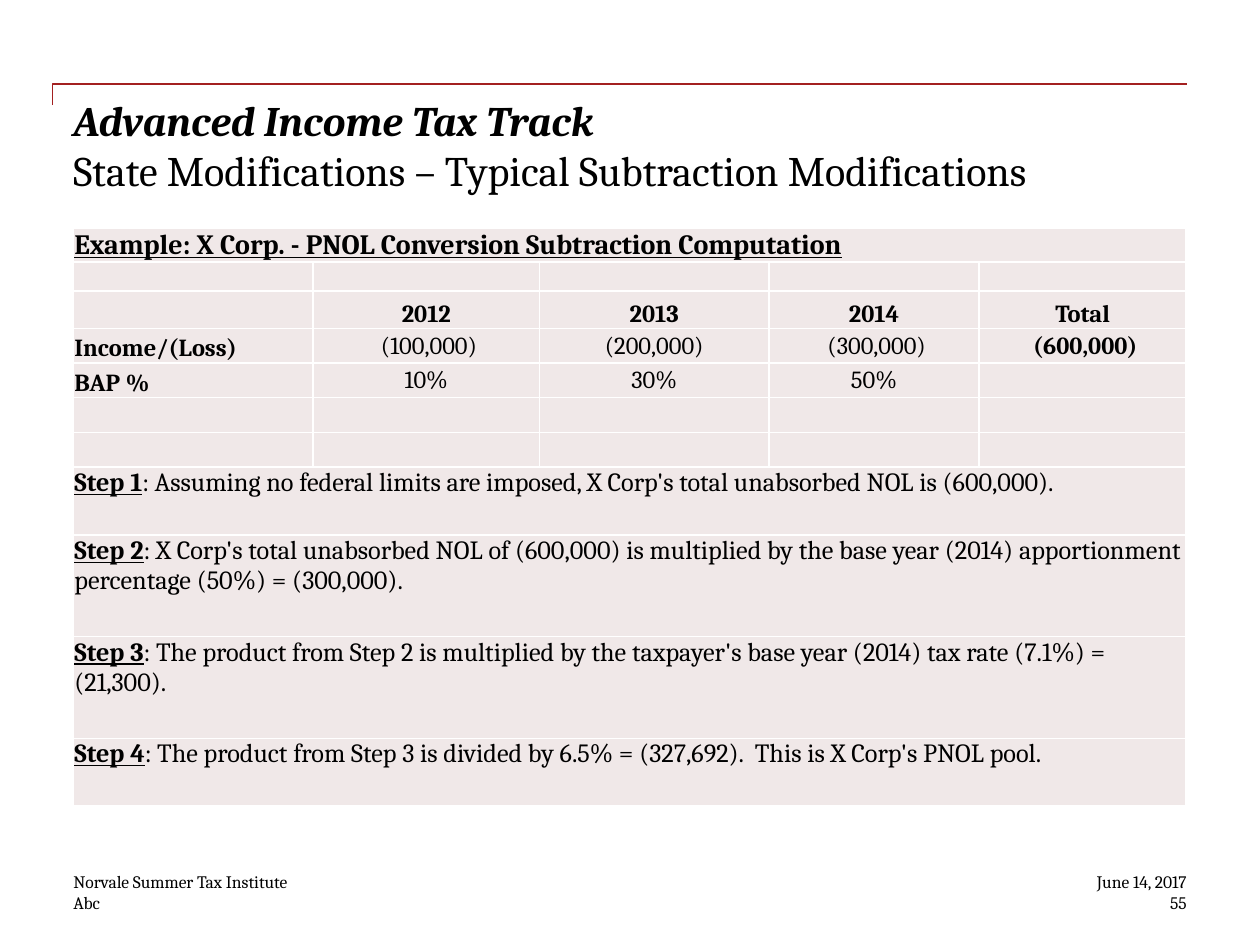
from dataclasses import dataclass

from pptx import Presentation
from pptx.dml.color import RGBColor
from pptx.enum.text import MSO_ANCHOR, PP_ALIGN
from pptx.util import Cm, Pt

LEFT, CENTER, RIGHT = PP_ALIGN.LEFT, PP_ALIGN.CENTER, PP_ALIGN.RIGHT
TOP, MIDDLE, BOTTOM = MSO_ANCHOR.TOP, MSO_ANCHOR.MIDDLE, MSO_ANCHOR.BOTTOM


@dataclass(frozen=True)
class Theme:
    font: str = "Cambria"
    text: RGBColor = RGBColor(0, 0, 0)
    rule: RGBColor = RGBColor(0xA3, 0x20, 0x20)
    cell: RGBColor = RGBColor(0xF0, 0xE8, 0xE8)
    title: Pt = Pt(24)
    heading: Pt = Pt(16)
    step: Pt = Pt(15)
    figure: Pt = Pt(14)
    small: Pt = Pt(10)


T = Theme()


def style(p, size, align=LEFT, bold=None):
    p.alignment = align
    p.font.name, p.font.size, p.font.bold = T.font, size, bold
    p.font.color.rgb = T.text


def clear_margins(tf):
    tf.margin_left = tf.margin_right = tf.margin_top = tf.margin_bottom = 0
    tf.word_wrap = True


prs = Presentation()
prs.slide_width, prs.slide_height = Cm(25.4), Cm(19.05)
s = prs.slides.add_slide(prs.slide_layouts[5])

# Red corner rule
fb = s.shapes.build_freeform(Cm(1.06), Cm(2.12))
fb.add_line_segments([(Cm(1.06), Cm(1.7)), (Cm(23.92), Cm(1.7))], close=False)
rule = fb.convert_to_shape()
rule.shadow.inherit = False
rule.fill.background()
rule.line.color.rgb = T.rule
rule.line.width = Pt(1)

# Title
title = s.shapes.title
title.left, title.top, title.width, title.height = Cm(1.48), Cm(1.9), Cm(22.43), Cm(2.54)
tf = title.text_frame
clear_margins(tf)
tf.vertical_anchor = TOP
p = tf.paragraphs[0]
style(p, T.title)
r = p.add_run()
r.text = "Advanced Income Tax Track"
r.font.bold = r.font.italic = True
p.add_line_break()
p.add_run().text = "State Modifications – Typical Subtraction Modifications"

# Table
COLS = [4.83, 4.57, 4.62, 4.24, 4.17]
ROWS = [0.66, 0.59, 0.75, 0.7, 0.7, 0.7, 0.7, 1.37, 2.05, 2.05, 1.36]
FIGURES = {
    2: ["", "2012", "2013", "2014", "Total"],
    3: ["Income/(Loss)", " (100,000)", "(200,000)", " (300,000)", " (600,000)"],
    4: ["BAP %", "10%", "30%", "50%", ""],
}
STEPS = [
    "Assuming no federal limits are imposed, X Corp's total unabsorbed NOL is (600,000).",
    "X Corp's total unabsorbed NOL of (600,000) is multiplied by the base year (2014) "
    "apportionment percentage (50%) = (300,000).",
    "The product from Step 2 is multiplied by the taxpayer's base year (2014) tax rate "
    "(7.1%) = (21,300).",
    "The product from Step 3 is divided by 6.5% = (327,692).  This is X Corp's PNOL pool.",
]
FIRST_STEP = 7

table = s.shapes.add_table(len(ROWS), len(COLS), Cm(1.48), Cm(4.61),
                           Cm(sum(COLS)), Cm(sum(ROWS))).table
table.first_row = table.horz_banding = False
for col, width in zip(table.columns, COLS):
    col.width = Cm(width)
for row, height in zip(table.rows, ROWS):
    row.height = Cm(height)
    for cell in row.cells:
        cell.fill.solid()
        cell.fill.fore_color.rgb = T.cell
        cell.margin_left = cell.margin_right = cell.margin_top = Cm(0.02)
        cell.margin_bottom = 0
        style(cell.text_frame.paragraphs[0], T.small)

for i in (0, *range(FIRST_STEP, len(ROWS))):
    table.cell(i, 0).merge(table.cell(i, len(COLS) - 1))

p = table.cell(0, 0).text_frame.paragraphs[0]
p.add_run().text = "Example: X Corp. - PNOL Conversion Subtraction Computation"
style(p, T.heading, bold=True)
p.font.underline = True

for i, texts in FIGURES.items():
    for j, text in enumerate(texts):
        if not text:
            continue
        cell = table.cell(i, j)
        is_label = i == 2 or j == 0
        cell.vertical_anchor = BOTTOM if is_label else MIDDLE
        p = cell.text_frame.paragraphs[0]
        p.add_run().text = text
        style(p, T.figure, CENTER if j else LEFT, is_label or j == 4)

for n, text in enumerate(STEPS, 1):
    p = table.cell(FIRST_STEP + n - 1, 0).text_frame.paragraphs[0]
    style(p, T.step)
    r = p.add_run()
    r.text = f"Step {n}"
    r.font.bold = r.font.underline = True
    p.add_run().text = f": {text}"

# Footer
FOOTER = [
    ("Norvale Summer Tax Institute", 1.48, 17.56, 14.6, LEFT),
    ("Abc", 1.48, 17.99, 7.19, LEFT),
    ("June 14, 2017", 19.69, 17.56, 4.23, RIGHT),
    ("55", 19.69, 17.99, 4.23, RIGHT),
]
for text, x, y, width, align in FOOTER:
    tf = s.shapes.add_textbox(Cm(x), Cm(y), Cm(width), Cm(0.43)).text_frame
    clear_margins(tf)
    p = tf.paragraphs[0]
    p.add_run().text = text
    style(p, T.small, align)

prs.save("out.pptx")
